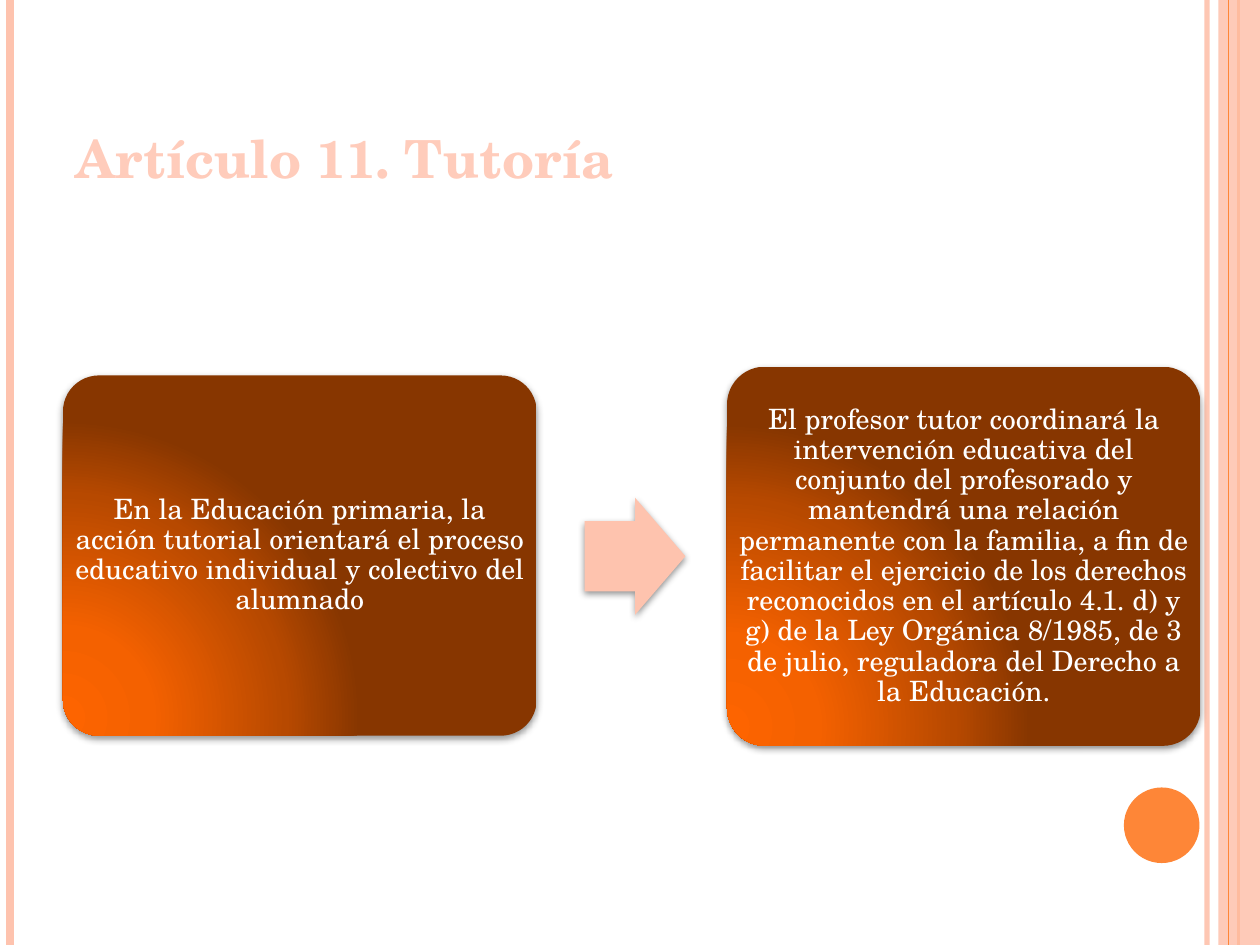
from lxml.etree import SubElement
from pptx import Presentation
from pptx.dml.color import RGBColor
from pptx.enum.shapes import MSO_CONNECTOR, MSO_SHAPE
from pptx.enum.text import MSO_ANCHOR, MSO_AUTO_SIZE, PP_ALIGN
from pptx.oxml import parse_xml
from pptx.oxml.ns import nsdecls, qn
from pptx.util import Inches, Pt

PEACH = RGBColor(0xFE, 0xC3, 0xAE)
ORANGE = RGBColor(0xFE, 0x86, 0x37)
TITLE_PEACH = RGBColor(0xFF, 0xCC, 0xBB)
WHITE = RGBColor(0xFF, 0xFF, 0xFF)
GLOW_STOPS = [
    (0, RGBColor(0xFD, 0x64, 0x00)),
    (30, RGBColor(0xF4, 0x61, 0x00)),
    (75, RGBColor(0xB7, 0x49, 0x00)),
    (100, RGBColor(0x87, 0x36, 0x00)),
]
FONT = "TeX Gyre Schola"
COLUMNS, ROWS = 100, 75


class SlideBuilder:
    """Places styled elements on a grid of 100 columns by 75 rows."""

    def __init__(self, presentation):
        self.column = presentation.slide_width / COLUMNS
        self.row = presentation.slide_height / ROWS
        self.slide = presentation.slides.add_slide(presentation.slide_layouts[5])

    def box(self, left, top, width, height):
        return (int(left * self.column), int(top * self.row),
                int(width * self.column), int(height * self.row))

    def set_text(self, shape, text, size, color, align, anchor, bold=False, margins=None):
        frame = shape.text_frame
        frame.text = text
        settings = {"word_wrap": True, "auto_size": MSO_AUTO_SIZE.NONE,
                    "vertical_anchor": anchor}
        if margins is not None:
            settings.update({f"margin_{side}": margins
                             for side in ("left", "top", "right", "bottom")})
        for name, value in settings.items():
            setattr(frame, name, value)
        paragraph = frame.paragraphs[0]
        paragraph.alignment = align
        font = paragraph.runs[0].font
        for name, value in {"name": FONT, "size": Pt(size), "bold": bold}.items():
            setattr(font, name, value)
        font.color.rgb = color
        return paragraph

    def set_alpha(self, element, percent):
        for color in element.iter(qn("a:srgbClr")):
            SubElement(color, qn("a:alpha"), val=str(percent * 1000))

    def title(self, text, *place):
        shape = self.slide.shapes.title
        shape.left, shape.top, shape.width, shape.height = self.box(*place)
        self.set_text(shape, text, 30, TITLE_PEACH, PP_ALIGN.LEFT, MSO_ANCHOR.BOTTOM, bold=True)

    def stripe(self, column, width, color, alpha=100):
        x, _, _, height = self.box(column, 0, 0, ROWS)
        connector = self.slide.shapes.add_connector(MSO_CONNECTOR.STRAIGHT, x, 0, x, height)
        connector.line.width = Pt(width)
        connector.line.color.rgb = color
        properties = connector._element.spPr
        if alpha < 100:
            self.set_alpha(properties, alpha)
        SubElement(properties, qn("a:effectLst"))

    def shape(self, kind, place, color, adjustments=(), alpha=100):
        shape = self.slide.shapes.add_shape(kind, *self.box(*place))
        for index, value in enumerate(adjustments):
            shape.adjustments[index] = value
        shape.fill.solid()
        shape.fill.fore_color.rgb = color
        shape.line.fill.background()
        shape.shadow.inherit = False
        if alpha < 100:
            self.set_alpha(shape._element.spPr, alpha)
        return shape

    def drop_shadow(self, shape):
        effects = shape._element.spPr.find(qn("a:effectLst"))
        effects.append(parse_xml(
            f'<a:outerShdw {nsdecls("a")} blurRad="{Pt(4)}" dist="{Pt(1.6)}" dir="5400000"'
            ' rotWithShape="0"><a:srgbClr val="000000"><a:alpha val="42000"/></a:srgbClr>'
            '</a:outerShdw>'))

    def glow(self, shape):
        stops = "".join(f'<a:gs pos="{position * 1000}"><a:srgbClr val="{color}"/></a:gs>'
                        for position, color in GLOW_STOPS)
        gradient = parse_xml(
            f'<a:gradFill {nsdecls("a")} rotWithShape="1"><a:gsLst>{stops}</a:gsLst>'
            '<a:path path="circle"><a:fillToRect l="5000" t="100000" r="120000" b="10000"/>'
            '</a:path></a:gradFill>')
        properties = shape._element.spPr
        properties.replace(properties.find(qn("a:solidFill")), gradient)

    def card(self, text, *place):
        shape = self.shape(MSO_SHAPE.ROUNDED_RECTANGLE, place, ORANGE, [0.1])
        self.glow(shape)
        self.drop_shadow(shape)
        paragraph = self.set_text(shape, text, 16, WHITE, PP_ALIGN.CENTER,
                                  MSO_ANCHOR.MIDDLE, margins=0)
        paragraph.line_spacing = 0.9

    def arrow(self, *place):
        self.drop_shadow(self.shape(MSO_SHAPE.RIGHT_ARROW, place, PEACH, [0.6, 0.5]))


def main():
    presentation = Presentation()
    presentation.slide_width, presentation.slide_height = Inches(10), Inches(7.5)
    builder = SlideBuilder(presentation)

    # Side stripes and corner dot
    builder.stripe(95.8, 3, PEACH, alpha=93)
    builder.stripe(0.8, 4.5, PEACH)
    builder.stripe(98.3, 1.5, ORANGE)
    builder.shape(MSO_SHAPE.RECTANGLE, (96.7, 0, 3.3, ROWS), PEACH, alpha=87)
    builder.stripe(97.5, 0.75, ORANGE)
    builder.shape(MSO_SHAPE.OVAL, (89.2, 62.5, 6, 6), ORANGE)

    # Title
    builder.title("Artículo 11. Tutoría", 5, 3, 81.7, 12.5)

    # Two cards joined by an arrow
    builder.card("En la Educación primaria, la acción tutorial orientará el proceso "
                 "educativo individual y colectivo del alumnado", 5, 29.8, 37.6, 28.6)
    builder.arrow(46.4, 39.5, 8, 9.3)
    builder.card("El profesor tutor coordinará la intervención educativa del conjunto del "
                 "profesorado y mantendrá una relación permanente con la familia, a fin de "
                 "facilitar el ejercicio de los derechos reconocidos en el artículo 4.1. d) y "
                 "g) de la Ley Orgánica 8/1985, de 3 de julio, reguladora del Derecho a la "
                 "Educación.", 57.7, 29.1, 37.6, 30.1)

    presentation.save("out.pptx")


if __name__ == "__main__":
    main()
